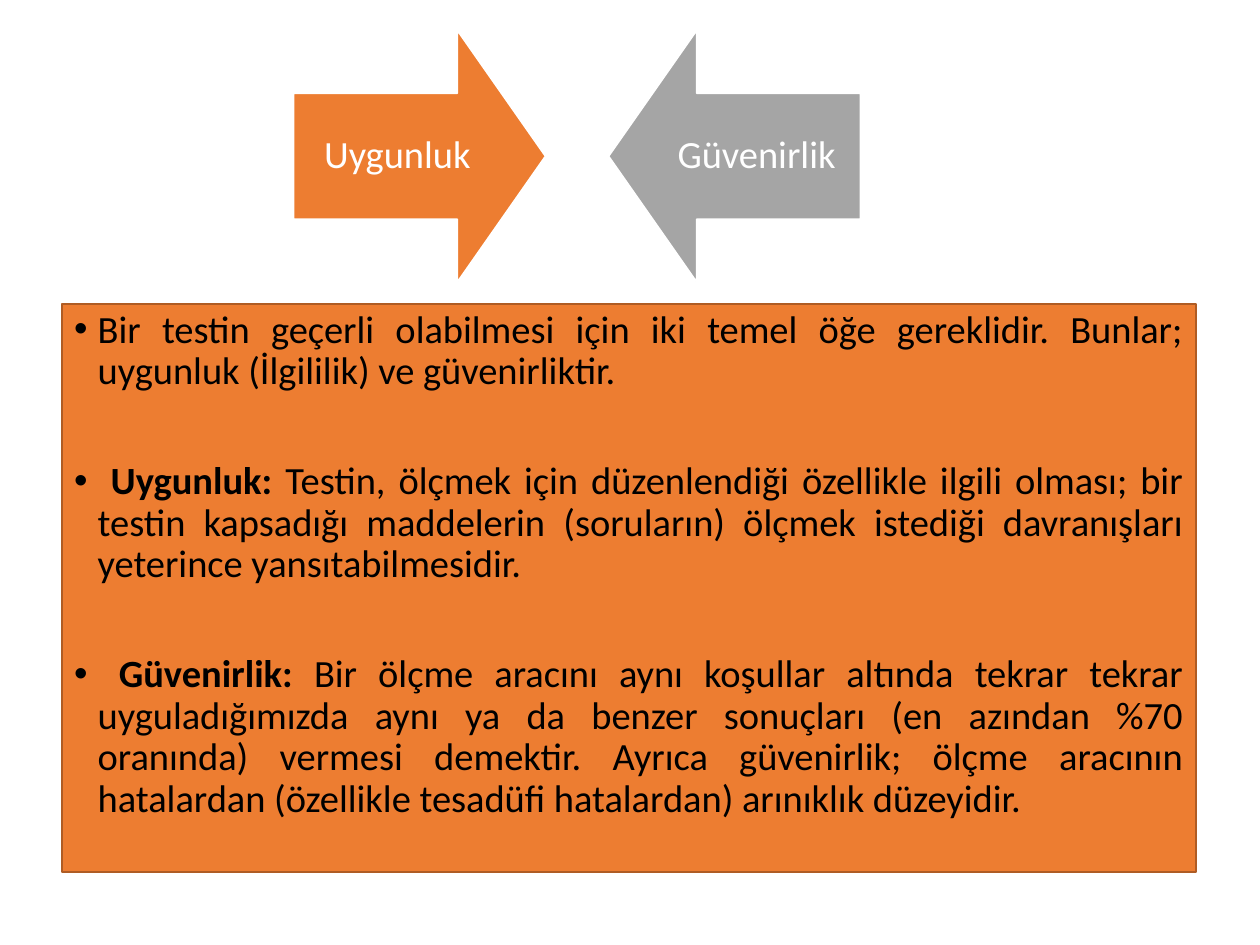
from dataclasses import dataclass

from lxml import etree
from pptx import Presentation
from pptx.dml.color import RGBColor
from pptx.enum import shapes, text
from pptx.oxml.ns import qn
from pptx.util import Pt

FONT, FONT_SIZE = "Calibri", 22
ORANGE, GRAY, BROWN = "ED7D31", "A5A5A5", "AF5C24"
WHITE, BLACK = "FFFFFF", "000000"
ARROW_LEFT, ARROW_TOP, ARROW_SIZE, ARROW_GAP = 167.76, 17.28, 144, 36
BULLET_INDENT = 13.5


@dataclass
class Arrow:
    label: str
    kind: shapes.MSO_SHAPE
    color: str


@dataclass
class Definition:
    term: str
    body: str
    space_before: float


ARROWS = [
    Arrow("Uygunluk", shapes.MSO_SHAPE.RIGHT_ARROW, ORANGE),
    Arrow("Güvenirlik", shapes.MSO_SHAPE.LEFT_ARROW, GRAY),
]
DEFINITIONS = [
    Definition(
        "",
        "Bir testin geçerli olabilmesi için iki temel öğe gereklidir. Bunlar; "
        "uygunluk (İlgililik) ve güvenirliktir. ",
        7.5,
    ),
    Definition(
        " Uygunluk: ",
        "Testin, ölçmek için düzenlendiği özellikle ilgili olması; bir testin "
        "kapsadığı maddelerin (soruların) ölçmek istediği davranışları yeterince "
        "yansıtabilmesidir. ",
        39,
    ),
    Definition(
        " Güvenirlik: ",
        "Bir ölçme aracını aynı koşullar altında tekrar tekrar uyguladığımızda "
        "aynı ya da benzer sonuçları (en azından %70 oranında) vermesi demektir. "
        "Ayrıca güvenirlik; ölçme aracının hatalardan (özellikle tesadüfi "
        "hatalardan) arınıklık düzeyidir. ",
        39,
    ),
]


def color(value: str) -> RGBColor:
    return RGBColor.from_string(value)


def add_filled_shape(slide, kind, left: float, top: float, width: float,
                     height: float, fill: str, line: str):
    shape = slide.shapes.add_shape(kind, Pt(left), Pt(top), Pt(width), Pt(height))
    shape.shadow.inherit = False
    shape.fill.solid()
    shape.fill.fore_color.rgb = color(fill)
    shape.line.color.rgb = color(line)
    shape.line.width = Pt(1)
    shape.text_frame.word_wrap = True
    return shape


def style_paragraph(paragraph, alignment, font_color: str) -> None:
    paragraph.alignment = alignment
    paragraph.line_spacing = 0.9
    paragraph.font.name = FONT
    paragraph.font.size = Pt(FONT_SIZE)
    paragraph.font.color.rgb = color(font_color)


def add_bullet(paragraph) -> None:
    properties = paragraph._p.get_or_add_pPr()
    properties.set("marL", str(Pt(BULLET_INDENT)))
    properties.set("indent", str(-Pt(BULLET_INDENT)))
    bullet_font = etree.Element(qn("a:buFont"), typeface="Arial")
    bullet = etree.Element(qn("a:buChar"), char="•")
    defaults = properties.find(qn("a:defRPr"))
    defaults.addprevious(bullet_font)
    defaults.addprevious(bullet)


def add_arrow(slide, arrow: Arrow, left: float) -> None:
    shape = add_filled_shape(slide, arrow.kind, left, ARROW_TOP, ARROW_SIZE,
                             ARROW_SIZE, arrow.color, WHITE)
    shape.adjustments[0] = 0.5
    shape.adjustments[1] = 0.35
    frame = shape.text_frame
    frame.vertical_anchor = text.MSO_ANCHOR.MIDDLE
    frame.margin_left = frame.margin_right = Pt(12)
    frame.margin_top = frame.margin_bottom = Pt(12)
    paragraph = frame.paragraphs[0]
    paragraph.text = arrow.label
    style_paragraph(paragraph, text.PP_ALIGN.CENTER, WHITE)


def add_definitions(slide, definitions: list[Definition]) -> None:
    shape = add_filled_shape(slide, shapes.MSO_SHAPE.RECTANGLE, 35.28, 173.52,
                             648, 324.72, ORANGE, BROWN)
    frame = shape.text_frame
    frame.vertical_anchor = text.MSO_ANCHOR.TOP
    for index, definition in enumerate(definitions):
        paragraph = frame.add_paragraph() if index else frame.paragraphs[0]
        if definition.term:
            term = paragraph.add_run()
            term.text = definition.term
            term.font.bold = True
        paragraph.add_run().text = definition.body
        style_paragraph(paragraph, text.PP_ALIGN.JUSTIFY, BLACK)
        paragraph.space_before = Pt(definition.space_before)
        add_bullet(paragraph)


def main() -> None:
    presentation = Presentation()
    presentation.slide_width = Pt(720)
    presentation.slide_height = Pt(540)
    slide = presentation.slides.add_slide(presentation.slide_layouts[6])
    add_definitions(slide, DEFINITIONS)
    for index, arrow in enumerate(ARROWS):
        add_arrow(slide, arrow, ARROW_LEFT + index * (ARROW_SIZE + ARROW_GAP))
    presentation.save("out.pptx")


if __name__ == "__main__":
    main()
